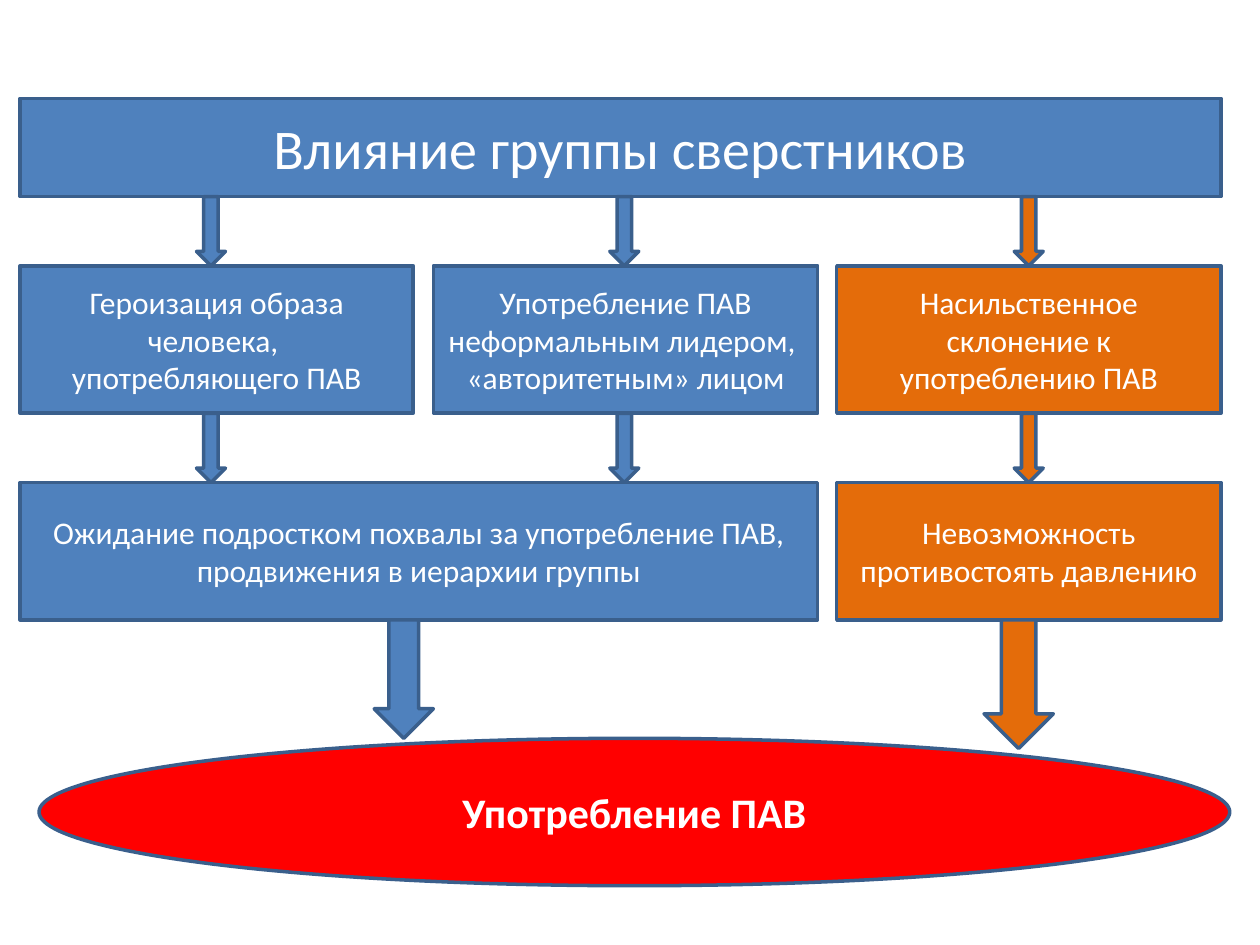
"""Build a flow diagram slide on how a peer group leads to substance use."""
from pptx import Presentation
from pptx.dml.color import RGBColor
from pptx.enum.shapes import MSO_SHAPE
from pptx.enum.text import MSO_ANCHOR, PP_ALIGN
from pptx.util import Inches, Pt

BLUE = RGBColor(0x4F, 0x81, 0xBD)
ORANGE = RGBColor(0xE4, 0x6C, 0x0A)
RED = RGBColor(0xFF, 0x00, 0x00)
OUTLINE = RGBColor(0x3A, 0x5F, 0x8C)
WHITE = RGBColor(0xFF, 0xFF, 0xFF)

deck = Presentation()
deck.slide_width = Inches(10)
deck.slide_height = Inches(7.5)
page = deck.slides.add_slide(deck.slide_layouts[6])


def add_figure(kind, left, top, width, height, color):
    figure = page.shapes.add_shape(
        kind, Inches(left), Inches(top), Inches(width), Inches(height))
    figure.shadow.inherit = False
    figure.fill.solid()
    figure.fill.fore_color.rgb = color
    figure.line.color.rgb = OUTLINE
    figure.line.width = Pt(2)
    return figure


def add_label(figure, lines, size, bold=False):
    frame = figure.text_frame
    frame.word_wrap = True
    frame.vertical_anchor = MSO_ANCHOR.MIDDLE
    for index, line in enumerate(lines):
        para = frame.add_paragraph() if index else frame.paragraphs[0]
        para.alignment = PP_ALIGN.CENTER
        span = para.add_run()
        span.text = line
        span.font.name = "Calibri"
        span.font.size = Pt(size)
        span.font.bold = bold
        span.font.color.rgb = WHITE


title_top, factor_top, effect_top = 0.78, 2.11, 3.83
title_height, factor_height, effect_height = 0.78, 1.17, 1.09
title_bottom = title_top + title_height
factor_bottom = factor_top + factor_height
effect_bottom = effect_top + effect_height

boxes = [
    (0.16, title_top, 9.53, title_height, BLUE, 32,
     ["Влияние группы сверстников"]),
    (0.16, factor_top, 3.12, factor_height, BLUE, 18,
     ["Героизация образа человека, ", "употребляющего ПАВ"]),
    (3.44, factor_top, 3.05, factor_height, BLUE, 18,
     ["Употребление ПАВ неформальным лидером, ", "«авторитетным» лицом"]),
    (6.64, factor_top, 3.05, factor_height, ORANGE, 18,
     ["Насильственное склонение к употреблению ПАВ"]),
    (0.16, effect_top, 6.33, effect_height, BLUE, 18,
     ["Ожидание подростком похвалы за употребление ПАВ, продвижения в иерархии группы"]),
    (6.64, effect_top, 3.05, effect_height, ORANGE, 18,
     ["Невозможность противостоять давлению"]),
]
for left, top, width, height, color, size, lines in boxes:
    box = add_figure(MSO_SHAPE.RECTANGLE, left, top, width, height, color)
    add_label(box, lines, size)

outcome = add_figure(MSO_SHAPE.OVAL, 0.31, 5.86, 9.45, 1.17, RED)
add_label(outcome, ["Употребление ПАВ"], 24, bold=True)

for top in (title_bottom, factor_bottom):
    for left, color in ((1.56, BLUE), (4.84, BLUE), (8.05, ORANGE)):
        add_figure(MSO_SHAPE.DOWN_ARROW, left, top, 0.23, 0.55, color)

for left, width, height, color in ((2.97, 0.47, 0.94, BLUE), (7.81, 0.55, 1.02, ORANGE)):
    add_figure(MSO_SHAPE.DOWN_ARROW, left, effect_bottom, width, height, color)

deck.save("out.pptx")
